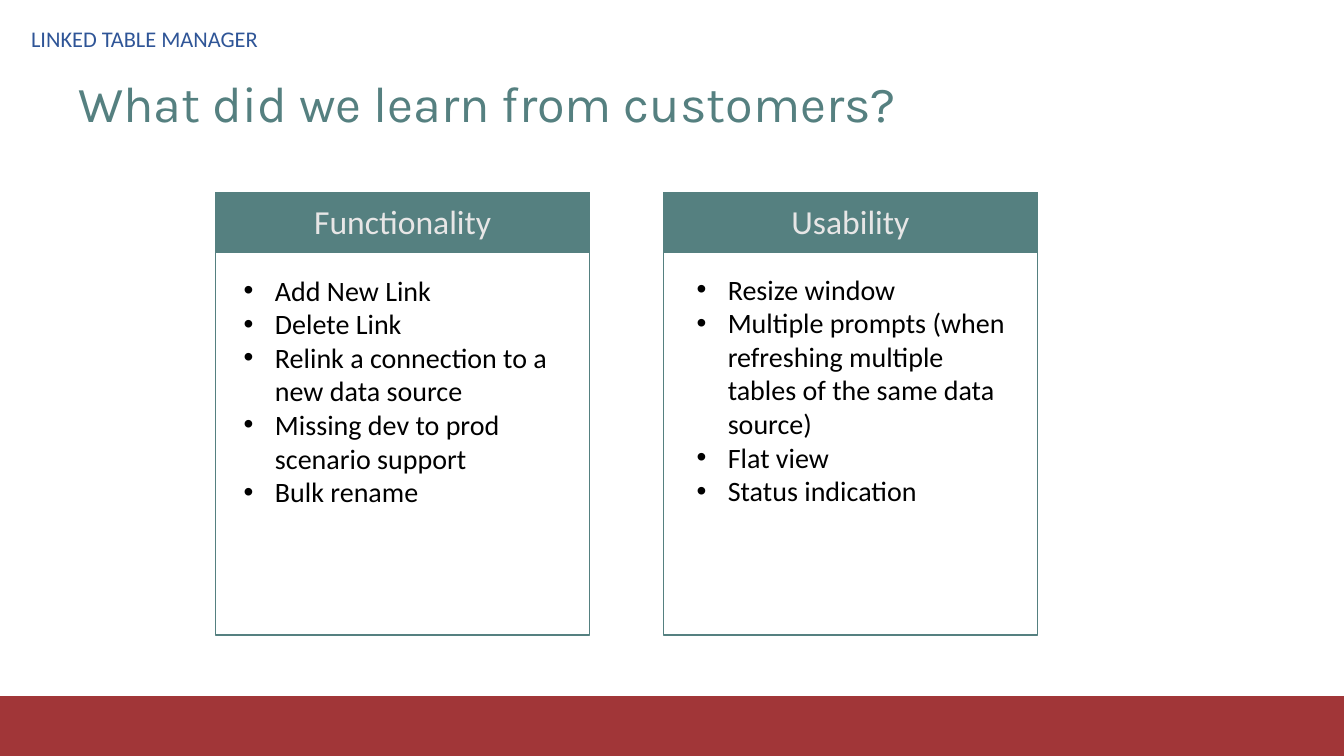
from pptx import Presentation
from pptx.dml.color import RGBColor
from pptx.enum.shapes import MSO_SHAPE
from pptx.enum.text import MSO_ANCHOR, PP_ALIGN
from pptx.oxml.ns import qn
from pptx.util import Inches, Pt
from lxml import etree

RECTANGLE = MSO_SHAPE.RECTANGLE
TOP, MIDDLE = MSO_ANCHOR.TOP, MSO_ANCHOR.MIDDLE
LEFT, CENTER = PP_ALIGN.LEFT, PP_ALIGN.CENTER

TEAL, RED, BLUE = "558080", "A13638", "2F5597"
WHITE, BLACK, PALE = "FFFFFF", "000000", "E7E6E6"

CARD_TOP, CARD_WIDTH, CARD_HEIGHT, HEADER_HEIGHT = 25.47, 27.83, 58.53, 7.87
CARDS = [
    ("Functionality", 16.05, 17.4, 35.47,
     ["Add New Link", "Delete Link", "Relink a connection to a new data source",
      "Missing dev to prod scenario support", "Bulk rename"]),
    ("Usability", 49.36, 51.09, 35.33,
     ["Resize window",
      "Multiple prompts (when refreshing multiple tables of the same data source)",
      "Flat view", "Status indication"]),
]


def color(value):
    return RGBColor.from_string(value)


class Page:
    """Draws elements on one slide, measured on a 100 by 100 grid."""

    def __init__(self, deck, font="Calibri"):
        self.font = font
        self.column = deck.slide_width / 100
        self.row = deck.slide_height / 100
        self.slide = deck.slides.add_slide(deck.slide_layouts[6])

    def place(self, left, top, width, height):
        return (round(left * self.column), round(top * self.row),
                round(width * self.column), round(height * self.row))

    def panel(self, *area, fill, line):
        box = self.slide.shapes.add_shape(RECTANGLE, *self.place(*area))
        box.shadow.inherit = False
        box.fill.solid()
        box.fill.fore_color.rgb = color(fill)
        box.line.color.rgb = color(line)
        box.line.width = Pt(1)

    def text(self, lines, *area, size, ink, font=None, align=LEFT, anchor=TOP,
             spacing=1.0, bullet=None):
        frame = self.slide.shapes.add_textbox(*self.place(*area)).text_frame
        frame.word_wrap = True
        frame.vertical_anchor = anchor
        for index, line in enumerate(lines):
            para = frame.add_paragraph() if index else frame.paragraphs[0]
            para.alignment = align
            para.line_spacing = spacing
            if bullet:
                self.bullet(para, bullet)
            span = para.add_run()
            span.text = line
            span.font.name = font or self.font
            span.font.size = Pt(size)
            span.font.color.rgb = color(ink)

    def bullet(self, para, mark):
        properties = para._p.get_or_add_pPr()
        indent = Inches(0.31)
        properties.set("marL", str(indent))
        properties.set("indent", str(-indent))
        etree.SubElement(properties, qn("a:buFont")).set("typeface", "Arial")
        etree.SubElement(properties, qn("a:buChar")).set("char", mark)

    def card(self, heading, left, list_left, list_top, items):
        self.panel(left, CARD_TOP, CARD_WIDTH, CARD_HEIGHT, fill=WHITE, line=TEAL)
        self.panel(left, CARD_TOP, CARD_WIDTH, HEADER_HEIGHT, fill=TEAL, line=TEAL)
        self.text([heading], left, 25.87, CARD_WIDTH, 6.67,
                  size=24, ink=PALE, align=CENTER)
        self.text(items, list_left, list_top, 25.36, 37.2,
                  size=20, ink=BLACK, bullet="•")


def main():
    deck = Presentation()
    deck.slide_width, deck.slide_height = Inches(13.33), Inches(7.5)
    page = Page(deck)
    page.panel(0, 92.13, 100, 7.87, fill=RED, line=RED)
    page.text(["What did we learn from customers?"], 5.1, 4.4, 86.27, 19.33,
              size=36, ink=TEAL, font="Karla", anchor=MIDDLE, spacing=0.9)
    page.text(["LINKED TABLE MANAGER"], 1.58, 2.67, 20.03, 4.93, size=16, ink=BLUE)
    for card in CARDS:
        page.card(*card)
    deck.save("out.pptx")


if __name__ == "__main__":
    main()
